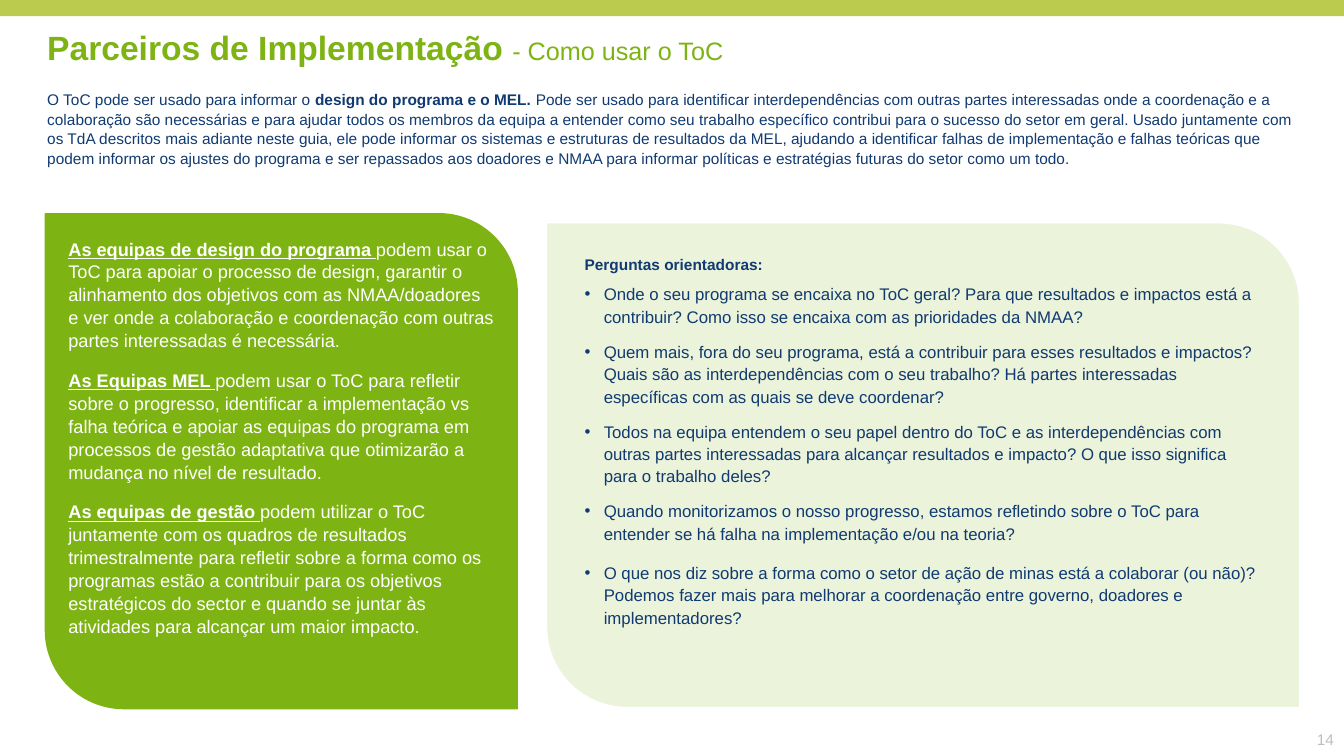
from lxml.etree import SubElement
from pptx import Presentation
from pptx.dml.color import RGBColor
from pptx.enum.shapes import MSO_SHAPE
from pptx.enum.text import MSO_ANCHOR, PP_ALIGN
from pptx.oxml.ns import qn
from pptx.util import Inches, Pt

COLORS = {"green": "7DB414", "lime": "BACB4E", "navy": "103A71",
          "white": "FFFFFF", "gray": "BFBFBF"}

prs = Presentation()
prs.slide_width, prs.slide_height = Inches(13.33), Inches(7.5)
slide = prs.slides.add_slide(prs.slide_layouts[6])


def add_block(kind, left, top, width, height, fill=None, line=None):
    """Add a preset shape, or a wrapping text box when kind is None."""
    place = [Inches(v) for v in (left, top, width, height)]
    if kind is None:
        block = slide.shapes.add_textbox(*place)
    else:
        block = slide.shapes.add_shape(kind, *place)
        block.shadow.inherit = False
        block.fill.solid()
        block.fill.fore_color.rgb = RGBColor.from_string(COLORS[fill])
        if line:
            block.line.color.rgb = RGBColor.from_string(COLORS[line])
            block.line.width = Pt(1)
        else:
            block.line.fill.background()
    block.text_frame.word_wrap = True
    return block


def add_run(paragraph, text, size, color, bold=False, underline=False):
    run = paragraph.add_run()
    run.text = text
    run.font.name = "Arial"
    run.font.size = Pt(size)
    run.font.bold = bold
    run.font.underline = underline
    run.font.color.rgb = RGBColor.from_string(COLORS[color])


# Guiding questions panel: pale green, rounded top right and bottom left
questions_panel = add_block(MSO_SHAPE.ROUND_2_DIAG_RECTANGLE,
                            5.42, 2.21, 7.47, 4.81, "green", "white")
panel_color = questions_panel.fill._xPr.find(qn("a:solidFill"))[0]
SubElement(panel_color, qn("a:alpha"), val="15000")

# Guiding questions: (text, space after)
questions = [
    ("Onde o seu programa se encaixa no ToC geral? Para que resultados e impactos está a "
     "contribuir? Como isso se encaixa com as prioridades da NMAA?", 9),
    ("Quem mais, fora do seu programa, está a contribuir para esses resultados e impactos? "
     "Quais são as interdependências com o seu trabalho? Há partes interessadas específicas "
     "com as quais se deve coordenar?", 9),
    ("Todos na equipa entendem o seu papel dentro do ToC e as interdependências com outras "
     "partes interessadas para alcançar resultados e impacto? O que isso significa para o "
     "trabalho deles?", 9),
    ("Quando monitorizamos o nosso progresso, estamos refletindo sobre o ToC para entender "
     "se há falha na implementação e/ou na teoria?", 12),
    ("O que nos diz sobre a forma como o setor de ação de minas está a colaborar (ou não)? "
     "Podemos fazer mais para melhorar a coordenação entre governo, doadores e "
     "implementadores?", 12),
]
questions_text = add_block(None, 5.7, 2.48, 6.9, 3.82).text_frame
heading = questions_text.paragraphs[0]
heading.space_after = Pt(6)
add_run(heading, "Perguntas orientadoras:", 11, "navy", bold=True)
for question, space_after in questions:
    item = questions_text.add_paragraph()
    item.line_spacing = Pt(16)
    item.space_after = Pt(space_after)
    add_run(item, question, 12, "navy")
    properties = item._p.get_or_add_pPr()
    properties.set("marL", str(Inches(0.19)))
    properties.set("indent", str(-Inches(0.19)))
    SubElement(properties, qn("a:buFont"), typeface="Arial")
    SubElement(properties, qn("a:buChar"), char="•")

# Teams panel: (team, how it uses the ToC)
teams = [
    ("As equipas de design do programa ",
     "podem usar o ToC para apoiar o processo de design, garantir o alinhamento dos "
     "objetivos com as NMAA/doadores e ver onde a colaboração e coordenação com outras "
     "partes interessadas é necessária."),
    ("As Equipas MEL ",
     "podem usar o ToC para refletir sobre o progresso, identificar a implementação vs "
     "falha teórica e apoiar as equipas do programa em processos de gestão adaptativa que "
     "otimizarão a mudança no nível de resultado."),
    ("As equipas de gestão ",
     "podem utilizar o ToC juntamente com os quadros de resultados trimestralmente para "
     "refletir sobre a forma como os programas estão a contribuir para os objetivos "
     "estratégicos do sector e quando se juntar às atividades para alcançar um maior "
     "impacto."),
]
teams_panel = add_block(MSO_SHAPE.ROUND_2_DIAG_RECTANGLE,
                        0.45, 2.12, 4.68, 4.91, "green", "green")
teams_text = teams_panel.text_frame
teams_text.vertical_anchor = MSO_ANCHOR.TOP
teams_text.margin_left = teams_text.margin_right = 0
teams_text.margin_top = teams_text.margin_bottom = 0
for index, (team, usage) in enumerate(teams):
    entry = teams_text.add_paragraph() if index else teams_text.paragraphs[0]
    entry.alignment = PP_ALIGN.LEFT
    entry.line_spacing = 1.05
    entry.space_after = Pt(12)
    add_run(entry, team, 13, "white", bold=True, underline=True)
    add_run(entry, usage, 13, "white")

# Both panels round the top right and bottom left corners
for panel in (questions_panel, teams_panel):
    panel.adjustments[0] = 0
    panel.adjustments[1] = 0.16667

# Title and top band
title = add_block(None, 0.37, 0.26, 12.9, 0.59).text_frame.paragraphs[0]
title.line_spacing = 0.9
add_run(title, "Parceiros de Implementação ", 24, "green", bold=True)
add_run(title, "- Como usar o ToC", 18, "green")
add_block(MSO_SHAPE.RECTANGLE, 0, 0, 13.33, 0.16, "lime")

# Introduction
intro = add_block(None, 0.37, 0.84, 12.7, 0.84).text_frame.paragraphs[0]
intro.line_spacing = 1.05
add_run(intro, "O ToC pode ser usado para informar o ", 11, "navy")
add_run(intro, "design do programa e o MEL. ", 11, "navy", bold=True)
add_run(intro,
        "Pode ser usado para identificar interdependências com outras partes interessadas "
        "onde a coordenação e a colaboração são necessárias e para ajudar todos os membros "
        "da equipa a entender como seu trabalho específico contribui para o sucesso do setor "
        "em geral. Usado juntamente com os TdA descritos mais adiante neste guia, ele pode "
        "informar os sistemas e estruturas de resultados da MEL, ajudando a identificar "
        "falhas de implementação e falhas teóricas que podem informar os ajustes do programa "
        "e ser repassados aos doadores e NMAA para informar políticas e estratégias futuras "
        "do setor como um todo.", 11, "navy")

# Page number
page_text = add_block(None, 12.87, 7.17, 0.46, 0.33).text_frame
page_text.vertical_anchor = MSO_ANCHOR.MIDDLE
page_text.paragraphs[0].alignment = PP_ALIGN.RIGHT
add_run(page_text.paragraphs[0], "14", 11, "gray")

prs.save("out.pptx")
